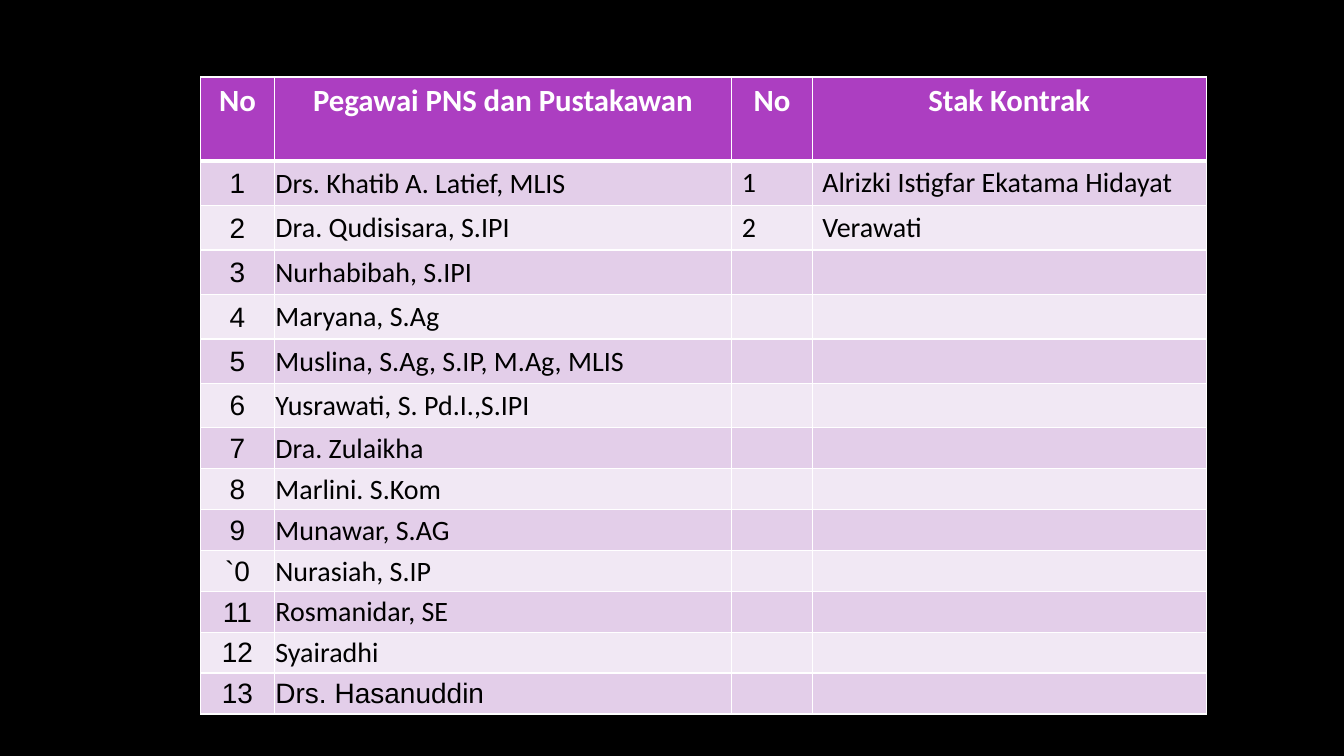
from lxml import etree
from pptx import Presentation
from pptx.dml.color import RGBColor
from pptx.enum.text import MSO_ANCHOR, PP_ALIGN
from pptx.oxml.ns import qn
from pptx.util import Cm, Pt

CENTER, LEFT = PP_ALIGN.CENTER, PP_ALIGN.LEFT
TOP, MIDDLE = MSO_ANCHOR.TOP, MSO_ANCHOR.MIDDLE

COLORS = {
    "back": "000000",
    "head": "AC3EC1",
    "odd": "E3CEE9",
    "even": "F1E8F4",
    "line": "FFFFFF",
    "text": "000000",
}
HEADS = ["No", "Pegawai PNS dan Pustakawan", "No", "Stak Kontrak"]
STAFF = [
    ("1", "Drs. Khatib A. Latief, MLIS"),
    ("2", "Dra. Qudisisara, S.IPI"),
    ("3", "Nurhabibah, S.IPI"),
    ("4", "Maryana, S.Ag"),
    ("5", "Muslina, S.Ag, S.IP, M.Ag, MLIS"),
    ("6", "Yusrawati, S. Pd.I.,S.IPI"),
    ("7", "Dra. Zulaikha"),
    ("8", "Marlini. S.Kom"),
    ("9", "Munawar, S.AG"),
    ("`0", "Nurasiah, S.IP"),
    ("11", "Rosmanidar, SE"),
    ("12", "Syairadhi"),
    ("13", "Drs. Hasanuddin"),
]
HIRES = [("1", "Alrizki Istigfar Ekatama Hidayat"), ("2", "Verawati")]
WIDTHS = [1.85, 11.53, 2.03, 9.93]
HEIGHTS = [2.12] + [1.12] * 6 + [1.03] * 7


def color(name):
    """Return the named colour."""
    return RGBColor.from_string(COLORS[name])


def border(cell, top, bottom):
    """Draw the four edges of a cell, with widths in points."""
    props = cell._tc.get_or_add_tcPr()
    for tag, width in (("lnL", 1), ("lnR", 1), ("lnT", top), ("lnB", bottom)):
        edge = etree.SubElement(props, qn("a:" + tag), w=str(Pt(width)))
        fill = etree.SubElement(edge, qn("a:solidFill"))
        etree.SubElement(fill, qn("a:srgbClr"), val=COLORS["line"])


def paint(cell, name):
    """Fill a cell with the named colour."""
    cell.fill.solid()
    cell.fill.fore_color.rgb = color(name)


def write(cell, text, face="Calibri", size=20, ink="text", bold=False, align=LEFT):
    """Put one styled paragraph in a cell."""
    para = cell.text_frame.paragraphs[0]
    para.text = text
    para.alignment = align
    font = para.font
    font.name, font.size, font.bold = face, Pt(size), bold
    font.color.rgb = color(ink)


def tighten(cell):
    """Centre a cell's text vertically with hardly any margin."""
    cell.vertical_anchor = MIDDLE
    cell.margin_left = cell.margin_right = cell.margin_top = Cm(0.03)
    cell.margin_bottom = Cm(0)


def fill_head(table):
    """Write the header row."""
    for col, text in enumerate(HEADS):
        cell = table.cell(0, col)
        border(cell, 1, 3)
        paint(cell, "head")
        cell.vertical_anchor = TOP
        write(cell, text, size=22, ink="line", bold=True, align=CENTER)


def fill_row(table, row):
    """Write one body row."""
    num, name = STAFF[row - 1]
    hire = HIRES[row - 1] if row <= len(HIRES) else ()
    for col in range(len(HEADS)):
        cell = table.cell(row, col)
        border(cell, 3 if row == 1 else 1, 1)
        paint(cell, "odd" if row % 2 else "even")
    for col in (0, 1):
        tighten(table.cell(row, col))
    write(table.cell(row, 0), num, face="Arial", align=CENTER)
    face = "Arial" if row == len(STAFF) else "Calibri"
    write(table.cell(row, 1), name, face=face)
    for col, text in enumerate(hire, 2):
        write(table.cell(row, col), text)


def add_grid(slide):
    """Add the staff table."""
    frame = slide.shapes.add_table(
        len(HEIGHTS), len(WIDTHS), Cm(5.06), Cm(1.94),
        Cm(sum(WIDTHS)), Cm(sum(HEIGHTS)))
    table = frame.table
    for col, width in zip(table.columns, WIDTHS):
        col.width = Cm(width)
    for row, height in zip(table.rows, HEIGHTS):
        row.height = Cm(height)
    fill_head(table)
    for row in range(1, len(HEIGHTS)):
        fill_row(table, row)


def main():
    """Build and save the staff slide."""
    deck = Presentation()
    deck.slide_width, deck.slide_height = Cm(33.87), Cm(19.05)
    slide = deck.slides.add_slide(deck.slide_layouts[6])
    slide.background.fill.solid()
    slide.background.fill.fore_color.rgb = color("back")
    add_grid(slide)
    deck.save("out.pptx")


if __name__ == "__main__":
    main()
